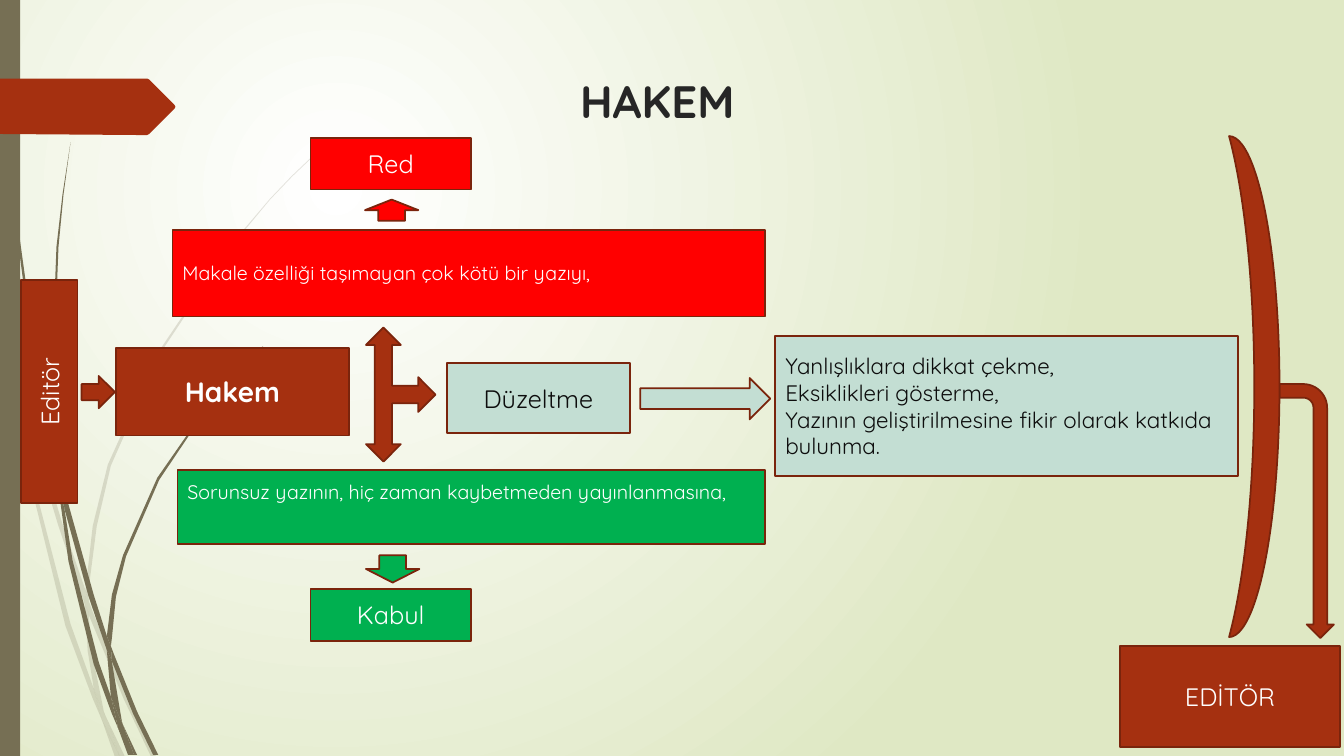
from lxml import etree
from pptx import Presentation
from pptx.dml.color import RGBColor
from pptx.enum.shapes import MSO_SHAPE as Kind
from pptx.enum.text import MSO_ANCHOR as Anchor, PP_ALIGN as Align
from pptx.oxml import parse_xml
from pptx.oxml.ns import nsdecls, qn
from pptx.util import Inches, Pt

FONT = "Quicksand"
COLORS = {
    "rust": "A53010", "edge": "7A240C", "red": "FF0000", "green": "00B050",
    "mint": "C3DED3", "olive": "766F54", "white": "FFFFFF", "ink": "0D0D0D",
    "title": "262626", "glow": "DFE8C4",
}

# Grass: each blade is made of short pieces, given by their corners.
PALE = [
    [(0.11, 3.5), (0.09, 3.22), (0, 2.82), (0, 2.99), (0.1, 3.44)],
    [(0.58, 5.22), (0.84, 5.99), (0.85, 5.86), (0.62, 5.2), (0.36, 4.33),
     (0.14, 3.45), (0.17, 3.76), (0.36, 4.49)],
    [(0.92, 6.07), (0.88, 5.96), (0.88, 6.1), (1.23, 6.94), (1.5, 7.51),
     (1.55, 7.51), (1.27, 6.92)],
    [(1.19, 7.51), (1.24, 7.51), (1.05, 7.11)],
    [(0.93, 6.83), (0.7, 6.19), (0.31, 4.69), (0.17, 3.76), (0.11, 3.5),
     (0.28, 4.7), (0.65, 6.21), (0.92, 6.93), (1.01, 7.14), (0.99, 7.07)],
    [(0.84, 5.99), (0.87, 6.46), (0.93, 6.83), (0.96, 6.92), (1.05, 7.11),
     (1.03, 7.06), (0.91, 6.46), (0.88, 6.1), (0.88, 6.08)],
    [(0.88, 5.84), (0.96, 5.22), (1.1, 4.62), (1.6, 3.49), (2.29, 2.45),
     (2.68, 1.98), (2.9, 1.75), (3.12, 1.54), (3.12, 1.53), (2.89, 1.75),
     (2.68, 1.97), (2.28, 2.44), (1.58, 3.48), (1.07, 4.61), (0.92, 5.22),
     (0.85, 5.84), (0.85, 5.86), (0.88, 5.96)],
    [(1.01, 7.14), (1.14, 7.51), (1.19, 7.51)],
    [(0.88, 6.08), (0.88, 6.1), (0.88, 5.96), (0.85, 5.86), (0.84, 5.99)],
    [(0.96, 6.92), (0.93, 6.83), (0.99, 7.07), (1.01, 7.14), (1.19, 7.51),
     (1.05, 7.11)],
]
DARK = [
    [(0.07, 1.1), (0.17, 2.33), (0.33, 3.55), (0.56, 4.77), (0.57, 4.81),
     (0.55, 4.57), (0.55, 4.53), (0.36, 3.55), (0.19, 2.32), (0.08, 1.09),
     (0.05, 0.48), (0.04, 0), (0.03, 0), (0.04, 0.48)],
    [(0.88, 5.92), (1.06, 6.45), (1.06, 6.33), (1.06, 6.31), (0.93, 5.9),
     (0.6, 4.72), (0.64, 5.05)],
    [(1.13, 6.49), (1.1, 6.41), (1.11, 6.56), (1.32, 7.08), (1.52, 7.49),
     (1.57, 7.49), (1.36, 7.06)],
    [(1.1, 6.91), (0.98, 6.57), (0.72, 5.56), (0.64, 5.05), (0.57, 4.77),
     (0.68, 5.57), (0.93, 6.59), (1.11, 7.08), (1.17, 7.22), (1.16, 7.17)],
    [(0.6, 4.72), (0.58, 4.53), (0.54, 3.49), (0.58, 2.45), (0.63, 1.93),
     (0.7, 1.41), (0.62, 1.93), (0.56, 2.45), (0.52, 3.49), (0.55, 4.49)],
    [(1.33, 7.49), (1.36, 7.49), (1.22, 7.19)],
    [(0.57, 4.77), (0.64, 5.05), (0.6, 4.72), (0.55, 4.49), (0.55, 4.53)],
    [(1.11, 6.33), (1.15, 5.92), (1.25, 5.52), (1.58, 4.76), (2.05, 4.06),
     (2.31, 3.74), (2.45, 3.59), (2.61, 3.44), (2.6, 3.44), (2.45, 3.58),
     (2.31, 3.73), (2.04, 4.05), (1.56, 4.74), (1.22, 5.51), (1.11, 5.9),
     (1.06, 6.31), (1.1, 6.41)],
    [(1.17, 7.22), (1.27, 7.49), (1.31, 7.49)],
    [(1.06, 6.45), (1.1, 6.91), (1.16, 7.06), (1.22, 7.19), (1.21, 7.16),
     (1.11, 6.56), (1.09, 6.51)],
    [(1.06, 6.45), (1.09, 6.51), (1.11, 6.56), (1.1, 6.41), (1.06, 6.31),
     (1.06, 6.33)],
    [(1.16, 7.06), (1.1, 6.91), (1.16, 7.17), (1.17, 7.22), (1.3, 7.49),
     (1.33, 7.49), (1.22, 7.19)],
]
BANNER = [(1.73, 1.08), (1.48, 1.33), (1.46, 1.34), (1.36, 1.34), (0, 1.33),
          (0, 0.78), (1.36, 0.78), (1.46, 0.78), (1.48, 0.79), (1.73, 1.04),
          (1.74, 1.06)]

# Boxes: frame, fill, lines of text, format
BOXES = [
    ((1.15, 3.45, 2.31, 0.87), "rust", ["Hakem"], dict(size=20, bold=True)),
    ((3.08, 1.37, 1.59, 0.51), "red", ["Red"], {}),
    ((4.43, 3.6, 1.82, 0.7), "mint", ["Düzeltme"], dict(color="ink")),
    ((3.08, 5.84, 1.59, 0.52), "green", ["Kabul"], {}),
    ((7.69, 3.33, 4.59, 1.39), "mint",
     ["Yanlışlıklara dikkat çekme,", "Eksiklikleri gösterme,",
      "Yazının geliştirilmesine fikir olarak katkıda bulunma."],
     dict(size=16, color="ink", align=Align.LEFT)),
    ((1.76, 4.66, 5.83, 0.74), "green",
     ["Sorunsuz yazının, hiç zaman kaybetmeden yayınlanmasına,"],
     dict(size=14, align=Align.LEFT, anchor=Anchor.TOP, top=0.1)),
    ((1.71, 2.28, 5.88, 0.86), "red",
     ["Makale özelliği taşımayan çok kötü bir yazıyı,"],
     dict(size=14, align=Align.LEFT)),
    ((11.11, 6.41, 2.18, 1), "rust", ["EDİTÖR"], {}),
    ((0.21, 2.78, 0.56, 2.21), "rust", ["Editör"], dict(turn="vert270")),
]

# Arrows and moon: kind, frame, fill, rotation
SIGNS = [
    (Kind.LEFT_RIGHT_UP_ARROW, (3.31, 3.57, 1.33, 0.69), "rust", 90),
    (Kind.RIGHT_ARROW, (6.35, 3.75, 1.29, 0.41), "mint", 0),
    (Kind.UP_ARROW, (3.62, 1.98, 0.53, 0.21), "red", 0),
    (Kind.DOWN_ARROW, (3.63, 5.51, 0.53, 0.27), "green", 0),
    (Kind.BENT_ARROW, (11.7, 4.8, 2.52, 0.54), "rust", 90),
    (Kind.MOON, (12.19, 1.35, 0.5, 4.97), "rust", 180),
    (Kind.RIGHT_ARROW, (0.81, 3.73, 0.33, 0.32), "rust", 0),
]

prs = Presentation()
prs.slide_width, prs.slide_height = Inches(13.33), Inches(7.5)
slide = prs.slides.add_slide(prs.slide_layouts[6])
shapes = slide.shapes


def rgb(name):
    return RGBColor.from_string(COLORS[name])


def paint(shape, fill, edge=None):
    shape.shadow.inherit = False
    shape.fill.solid()
    shape.fill.fore_color.rgb = rgb(fill)
    if edge:
        shape.line.color.rgb = rgb(edge)
        shape.line.width = Pt(1.25)
    else:
        shape.line.fill.background()


def add(kind, frame, fill, edge="edge", turn=0):
    shape = shapes.add_shape(kind, *map(Inches, frame))
    paint(shape, fill, edge)
    shape.rotation = turn
    return shape


def write(shape, lines, size=18, color="white", bold=False, align=Align.CENTER,
          anchor=Anchor.MIDDLE, top=0.05, turn=None):
    frame = shape.text_frame
    frame.word_wrap = True
    frame.vertical_anchor = anchor
    frame.margin_top = Inches(top)
    if turn:
        frame._txBody.bodyPr.set("vert", turn)
    for i, line in enumerate(lines):
        para = frame.paragraphs[0] if i == 0 else frame.add_paragraph()
        para.alignment = align
        run = para.add_run()
        run.text = line
        font = run.font
        font.name, font.size, font.bold = FONT, Pt(size), bold
        font.color.rgb = rgb(color)


def outline(pts, fill, alpha=None):
    spots = [(Inches(x), Inches(y)) for x, y in pts]
    pen = shapes.build_freeform(*spots[0], scale=1.0)
    pen.add_line_segments(spots[1:], close=True)
    shape = pen.convert_to_shape()
    paint(shape, fill)
    if alpha:
        tint = shape._element.spPr.find(qn("a:solidFill"))[0]
        etree.SubElement(tint, qn("a:alpha")).set("val", str(alpha * 1000))


def backdrop():
    """Fill the background with a round glow from the upper left."""
    slide.background.fill.solid()
    solid = slide._element.cSld.find(".//" + qn("a:solidFill"))
    stops = "".join(
        f'<a:gs pos="{pos}"><a:srgbClr val="{COLORS[name]}"/></a:gs>'
        for pos, name in ((0, "white"), (100000, "glow")))
    solid.getparent().replace(solid, parse_xml(
        f'<a:gradFill {nsdecls("a")} rotWithShape="1"><a:gsLst>{stops}</a:gsLst>'
        '<a:path path="circle"><a:fillToRect l="50000" t="50000" r="100000" '
        'b="100000"/></a:path></a:gradFill>'))


backdrop()
for grass, alpha in ((PALE, 20), (DARK, None)):
    for piece in grass:
        outline(piece, "olive", alpha)
add(Kind.RECTANGLE, (0, 0, 0.2, 7.5), "olive", None)
outline(BANNER, "rust")

title = shapes.add_textbox(*map(Inches, (0.46, 0.68, 12.12, 0.6)))
write(title, ["HAKEM"], size=32.4, color="title", bold=True, anchor=Anchor.TOP)
for frame, fill, lines, style in BOXES:
    write(add(Kind.RECTANGLE, frame, fill), lines, **style)
for kind, frame, fill, turn in SIGNS:
    add(kind, frame, fill, turn=turn)

prs.save("out.pptx")
